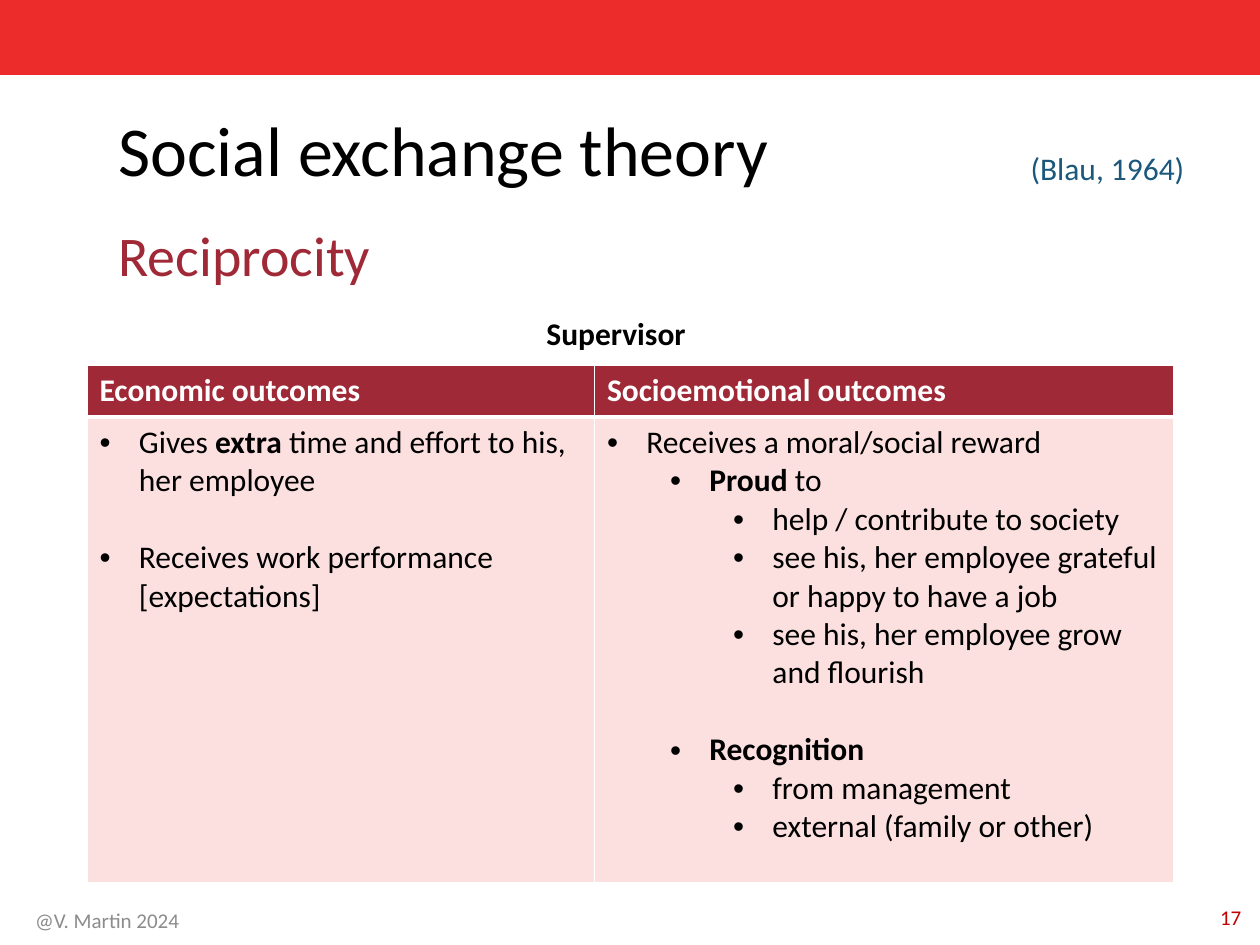
from dataclasses import dataclass

from lxml.etree import SubElement
from pptx import Presentation
from pptx.dml.color import RGBColor
from pptx.enum.shapes import MSO_SHAPE
from pptx.enum.text import MSO_ANCHOR, PP_ALIGN
from pptx.oxml import parse_xml
from pptx.oxml.ns import nsdecls, qn
from pptx.slide import Slide
from pptx.util import Pt


@dataclass(frozen=True)
class Theme:
    font: str = "Calibri"
    banner: str = "EB2C2B"
    accent: str = "9F2936"
    cell: str = "FCE0E0"
    citation: str = "1B587C"
    footer: str = "8C8C8C"
    number: str = "C00000"
    black: str = "000000"
    white: str = "FFFFFF"
    title_size: float = 40
    subtitle_size: float = 32
    body_size: float = 18
    footer_size: float = 12
    line_height: float = 22
    indent: float = 22.5
    level_step: float = 36


THEME = Theme()


@dataclass(frozen=True)
class Label:
    text: str
    left: float
    top: float
    width: float
    height: float
    size: float
    color: str
    bold: bool = False
    align: PP_ALIGN = PP_ALIGN.LEFT
    anchor: MSO_ANCHOR = MSO_ANCHOR.TOP
    wrap: bool = True
    line_spacing: float = 1.0


@dataclass(frozen=True)
class Bullet:
    text: str = ""
    bold_text: str = ""
    tail: str = ""
    level: int = 0
    gap_before: bool = False


LABELS = [
    Label("Social exchange theory", 60.5, 36.7, 659.5, 103, THEME.title_size, THEME.black,
          anchor=MSO_ANCHOR.MIDDLE, line_spacing=0.9),
    Label("(Blau, 1964)", 581.8, 79.9, 115.9, 29.5, THEME.body_size, THEME.citation,
          line_spacing=1.07),
    Label("Reciprocity", 60.5, 122.4, 159.8, 46, THEME.subtitle_size, THEME.accent, wrap=False),
    Label("Supervisor", 168.5, 175.7, 367.2, 29, THEME.body_size, THEME.black,
          bold=True, align=PP_ALIGN.CENTER),
    Label("@V. Martin 2024", 13, 511.2, 243.4, 28.8, THEME.footer_size, THEME.footer,
          anchor=MSO_ANCHOR.MIDDLE),
    Label("17", 554.4, 509.8, 162, 28.8, THEME.footer_size, THEME.number,
          align=PP_ALIGN.RIGHT, anchor=MSO_ANCHOR.MIDDLE),
]

HEADERS = ["Economic outcomes", "Socioemotional outcomes"]
OUTCOMES = [
    [
        Bullet("Gives ", "extra", " time and effort to his, her employee"),
        Bullet("Receives work performance [expectations]", gap_before=True),
    ],
    [
        Bullet("Receives a moral/social reward"),
        Bullet(bold_text="Proud", tail=" to", level=1),
        Bullet("help / contribute to society", level=2),
        Bullet("see his, her employee grateful or happy to have a job", level=2),
        Bullet("see his, her employee grow and flourish", level=2),
        Bullet(bold_text="Recognition", level=1, gap_before=True),
        Bullet("from management", level=2),
        Bullet("external (family or other)", level=2),
    ],
]
COLUMN_WIDTHS = [290, 331]
ROW_HEIGHTS = [29.5, 266.4]


def style_font(paragraph, size: float, color: str, bold: bool = False) -> None:
    font = paragraph.font
    font.name, font.size, font.bold = THEME.font, Pt(size), bold
    font.color.rgb = RGBColor.from_string(color)


def add_label(slide: Slide, label: Label) -> None:
    shape = slide.shapes.add_textbox(
        Pt(label.left), Pt(label.top), Pt(label.width), Pt(label.height))
    frame = shape.text_frame
    frame.word_wrap = label.wrap
    frame.vertical_anchor = label.anchor
    paragraph = frame.paragraphs[0]
    paragraph.text = label.text
    paragraph.alignment = label.align
    paragraph.line_spacing = label.line_spacing
    style_font(paragraph, label.size, label.color, label.bold)


def add_banner(slide: Slide) -> None:
    banner = slide.shapes.add_shape(MSO_SHAPE.RECTANGLE, 0, 0, Pt(720), Pt(42.5))
    banner.shadow.inherit = False
    banner.fill.solid()
    banner.fill.fore_color.rgb = RGBColor.from_string(THEME.banner)
    banner.line.color.rgb = RGBColor.from_string(THEME.banner)
    banner.line.width = Pt(1)


def style_cell(cell, fill: str, bottom_width: float) -> None:
    cell.fill.solid()
    cell.fill.fore_color.rgb = RGBColor.from_string(fill)
    properties = cell._tc.get_or_add_tcPr()
    widths = {"lnL": 1, "lnR": 1, "lnT": 1, "lnB": bottom_width}
    for position, (side, width) in enumerate(widths.items()):
        properties.insert(position, parse_xml(
            f'<a:{side} {nsdecls("a")} w="{Pt(width)}"><a:solidFill>'
            f'<a:srgbClr val="{THEME.white}"/></a:solidFill></a:{side}>'))


def write_bullet(paragraph, bullet: Bullet) -> None:
    paragraph.level = bullet.level
    if bullet.gap_before:
        paragraph.space_before = Pt(THEME.line_height)
    properties = paragraph._p.get_or_add_pPr()
    properties.set("marL", str(Pt(THEME.indent + bullet.level * THEME.level_step)))
    properties.set("indent", str(Pt(-THEME.indent)))
    SubElement(properties, qn("a:buFont"), typeface="Arial")
    SubElement(properties, qn("a:buChar"), char="•")
    style_font(paragraph, THEME.body_size, THEME.black)
    for text, bold in ((bullet.text, False), (bullet.bold_text, True), (bullet.tail, False)):
        if text:
            run = paragraph.add_run()
            run.text = text
            run.font.bold = bold


def add_outcome_table(slide: Slide) -> None:
    table = slide.shapes.add_table(
        len(ROW_HEIGHTS), len(COLUMN_WIDTHS), Pt(49.7), Pt(208.8),
        Pt(sum(COLUMN_WIDTHS)), Pt(sum(ROW_HEIGHTS))).table
    for row, height in zip(table.rows, ROW_HEIGHTS):
        row.height = Pt(height)
    for index, width in enumerate(COLUMN_WIDTHS):
        table.columns[index].width = Pt(width)

        header = table.cell(0, index)
        style_cell(header, THEME.accent, 3)
        paragraph = header.text_frame.paragraphs[0]
        paragraph.text = HEADERS[index]
        style_font(paragraph, THEME.body_size, THEME.white, bold=True)

        body = table.cell(1, index)
        style_cell(body, THEME.cell, 1)
        frame = body.text_frame
        for position, bullet in enumerate(OUTCOMES[index]):
            paragraph = frame.add_paragraph() if position else frame.paragraphs[0]
            write_bullet(paragraph, bullet)


def main() -> None:
    presentation = Presentation()
    presentation.slide_width, presentation.slide_height = Pt(720), Pt(540)
    slide = presentation.slides.add_slide(presentation.slide_layouts[6])

    # Banner, then headings and footer
    add_banner(slide)
    for label in LABELS:
        add_label(slide, label)

    # Outcomes for the supervisor
    add_outcome_table(slide)

    presentation.save("out.pptx")


if __name__ == "__main__":
    main()
